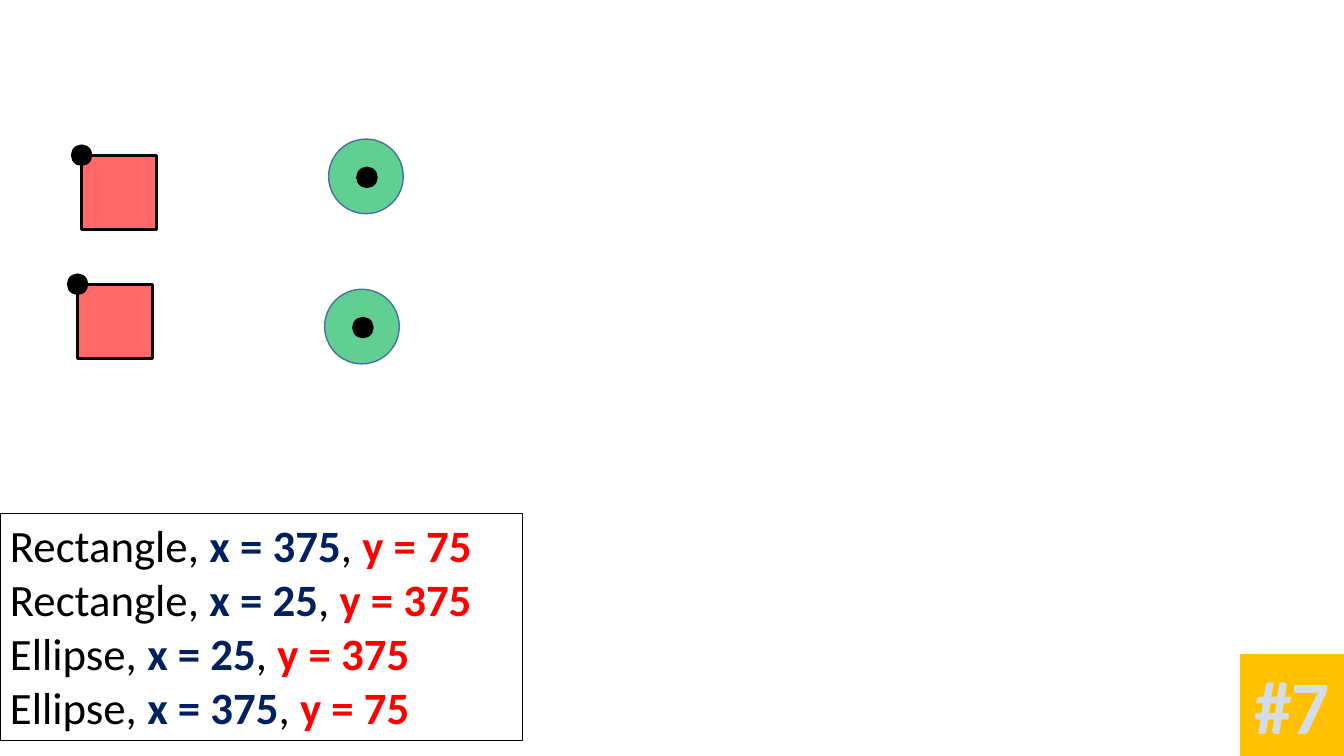
"""Build the slide matching shape coordinates to rectangles and ellipses."""
import lxml.etree
import pptx
import pptx.dml.color
import pptx.enum.dml
import pptx.enum.shapes
import pptx.enum.text
import pptx.oxml.ns
import pptx.util

Inches = pptx.util.Inches
Pt = pptx.util.Pt
qualified = pptx.oxml.ns.qn
RECTANGLE = pptx.enum.shapes.MSO_SHAPE.RECTANGLE
OVAL = pptx.enum.shapes.MSO_SHAPE.OVAL
SIDE = 0.74
DOT = 0.2
COORDINATES = [
    ("Rectangle", 375, 75),
    ("Rectangle", 25, 375),
    ("Ellipse", 25, 375),
    ("Ellipse", 375, 75),
]
MARKED_SHAPES = [
    (RECTANGLE, 0.77, 2.82),
    (OVAL, 3.22, 2.87),
    (RECTANGLE, 0.81, 1.54),
    (OVAL, 3.26, 1.38),
]
MARKED_STYLES = {
    RECTANGLE: {"fill": "FF0000", "opacity": 59, "line": "000000", "width": 2.25},
    OVAL: {"fill": "00B050", "opacity": 62, "line": "43739E", "width": 1},
}
DOT_OFFSETS = {RECTANGLE: -DOT / 2, OVAL: (SIDE - DOT) / 2 + 0.01}


def color(value):
    """Return the colour for a hex string."""
    return pptx.dml.color.RGBColor.from_string(value)


def add_shape(shapes, kind, box, fill=None, opacity=100, line=None, width=1):
    """Add a preset shape with its fill and line."""
    shape = shapes.add_shape(kind, *map(Inches, box))
    shape.shadow.inherit = False
    if fill:
        shape.fill.solid()
        shape.fill.fore_color.rgb = color(fill)
        if opacity < 100:
            tint = shape.fill._xPr.find(".//" + qualified("a:srgbClr"))
            alpha = lxml.etree.SubElement(tint, qualified("a:alpha"))
            alpha.set("val", str(opacity * 1000))
    else:
        shape.fill.background()
    if line:
        shape.line.color.rgb = color(line)
        shape.line.width = Pt(width)
    else:
        shape.line.fill.background()
    return shape


def add_run(paragraph, text, size, value, bold=False):
    """Add a formatted run to a paragraph."""
    run = paragraph.add_run()
    run.text = text
    formats = {"name": "Calibri", "size": Pt(size), "bold": bold}
    for name, setting in formats.items():
        setattr(run.font, name, setting)
    run.font.color.rgb = color(value)
    return run


def add_marked_shape(slide, kind, left, top):
    """Add a shape grouped with the dot at its reference point."""
    group = slide.shapes.add_group_shape()
    add_shape(group.shapes, kind, (left, top, SIDE, SIDE), **MARKED_STYLES[kind])
    offset = DOT_OFFSETS[kind]
    dot_box = (left + offset, top + offset, DOT, DOT)
    add_shape(group.shapes, OVAL, dot_box, fill="000000", line="000000")


def add_coordinate_list(slide):
    """Add the framed list of shape coordinates."""
    shape = add_shape(slide.shapes, RECTANGLE, (0, 5.09, 5.18, 2.26),
                      line="000000", width=0.75)
    frame = shape.text_frame
    frame.word_wrap = True
    frame.vertical_anchor = pptx.enum.text.MSO_ANCHOR.TOP
    for index, (name, x, y) in enumerate(COORDINATES):
        paragraph = frame.add_paragraph() if index else frame.paragraphs[0]
        paragraph.alignment = pptx.enum.text.PP_ALIGN.LEFT
        add_run(paragraph, f"{name}, ", 32, "000000")
        add_run(paragraph, f"x = {x}", 32, "002060", True)
        add_run(paragraph, ", ", 32, "000000")
        add_run(paragraph, f"y = {y}", 32, "FF0000", True)


def add_number_badge(slide):
    """Add the numbered corner badge with patterned, outlined text."""
    shape = add_shape(slide.shapes, RECTANGLE, (12.3, 6.49, 1.03, 1.01), fill="FFC000")
    frame = shape.text_frame
    frame.word_wrap = False
    frame.vertical_anchor = pptx.enum.text.MSO_ANCHOR.TOP
    paragraph = frame.paragraphs[0]
    paragraph.alignment = pptx.enum.text.PP_ALIGN.CENTER
    run = add_run(paragraph, "#7", 54, "D6DCE5", True)
    fill = run.font.fill
    fill.patterned()
    fill.pattern = pptx.enum.dml.MSO_PATTERN.DARK_UPWARD_DIAGONAL
    fill.fore_color.rgb = color("44546A")
    fill.back_color.rgb = color("D6DCE5")
    outline = lxml.etree.Element(qualified("a:ln"), w=str(Pt(1)))
    solid = lxml.etree.SubElement(outline, qualified("a:solidFill"))
    lxml.etree.SubElement(solid, qualified("a:srgbClr"), val="333F50")
    run.font._element.insert(0, outline)


def main():
    """Create and save the presentation."""
    presentation = pptx.Presentation()
    presentation.slide_width = Inches(13.33)
    presentation.slide_height = Inches(7.5)
    slide = presentation.slides.add_slide(presentation.slide_layouts[6])
    add_coordinate_list(slide)
    for kind, left, top in MARKED_SHAPES:
        add_marked_shape(slide, kind, left, top)
    add_number_badge(slide)
    presentation.save("out.pptx")


if __name__ == "__main__":
    main()
